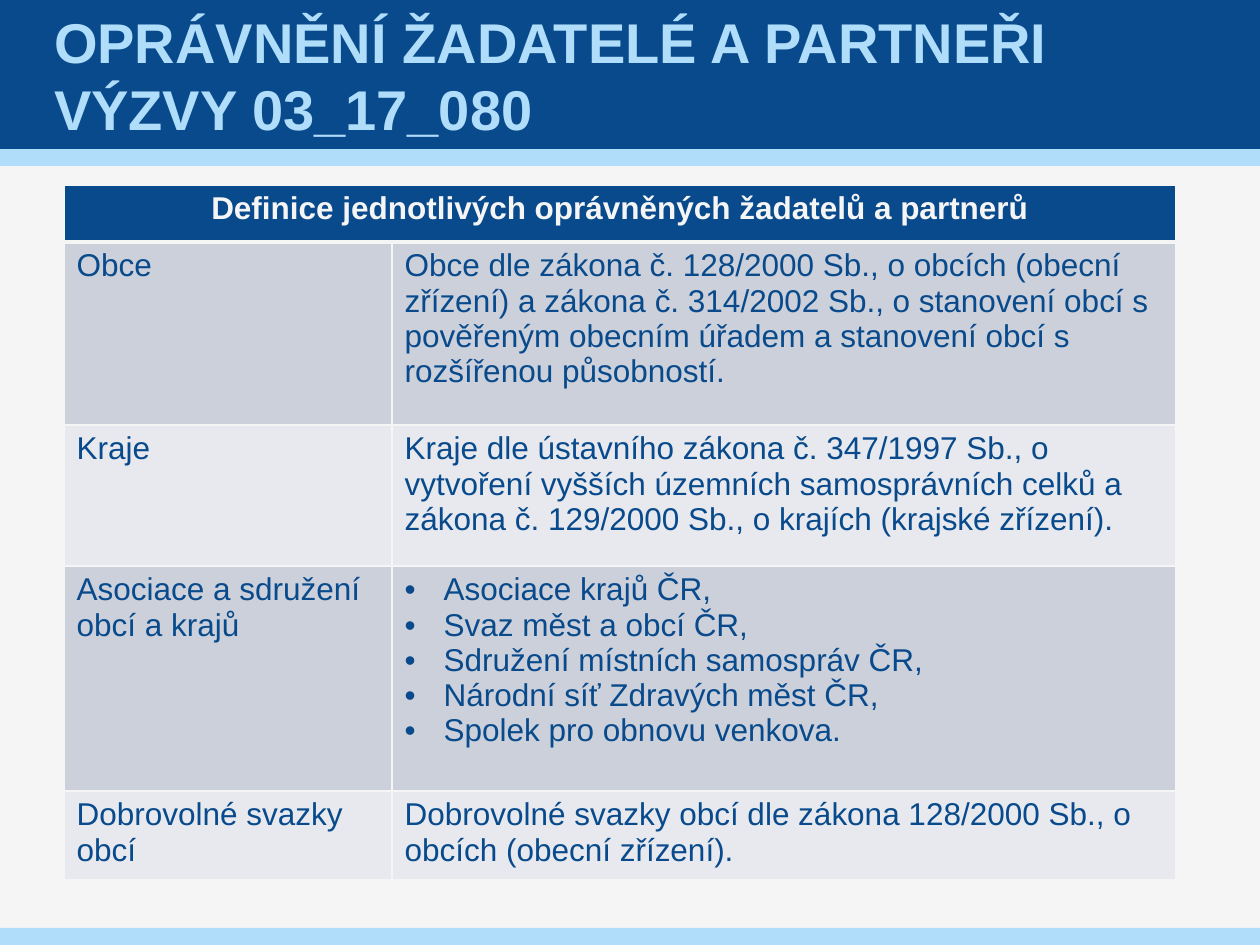
import pptx
import pptx.dml.color
import pptx.enum.shapes
import pptx.enum.text
import pptx.oxml
import pptx.oxml.ns
import pptx.util

RGBColor = pptx.dml.color.RGBColor
PP_ALIGN = pptx.enum.text.PP_ALIGN
MSO_ANCHOR = pptx.enum.text.MSO_ANCHOR

NAVY = RGBColor(0x08, 0x4A, 0x8B)
SKY = RGBColor(0xAF, 0xDD, 0xFA)
PAPER = RGBColor(0xF5, 0xF5, 0xF5)
BAND_DARK = RGBColor(0xCC, 0xD0, 0xDA)
BAND_LIGHT = RGBColor(0xE7, 0xE9, 0xEE)

FONT = "Arial"
PX_PER_INCH = 126
TITLE = "OPRÁVNĚNÍ ŽADATELÉ A PARTNEŘI VÝZVY 03_17_080"
HEADER = "Definice jednotlivých oprávněných žadatelů a partnerů"
COLUMN_WIDTHS = [328, 784]
ROW_HEIGHTS = [57, 183, 141, 225, 89]
APPLICANTS = [
    ("Obce", [
        "Obce dle zákona č. 128/2000 Sb., o obcích (obecní zřízení) a zákona "
        "č. 314/2002 Sb., o stanovení obcí s pověřeným obecním úřadem a "
        "stanovení obcí s rozšířenou působností."]),
    ("Kraje", [
        "Kraje dle ústavního zákona č. 347/1997 Sb., o vytvoření vyšších "
        "územních samosprávních celků a zákona č. 129/2000 Sb., o krajích "
        "(krajské zřízení)."]),
    ("Asociace a sdružení obcí a krajů", [
        "Asociace krajů ČR,",
        "Svaz měst a obcí ČR,",
        "Sdružení místních samospráv ČR,",
        "Národní síť Zdravých měst ČR,",
        "Spolek pro obnovu venkova."]),
    ("Dobrovolné svazky obcí", [
        "Dobrovolné svazky obcí dle zákona 128/2000 Sb., o obcích (obecní "
        "zřízení)."]),
]


def px(n):
    """Convert pixels to EMU."""
    return pptx.util.Emu(round(n * 914400 / PX_PER_INCH))


def format_runs(tf, size, color, bold=False):
    """Apply one font to every run of a text frame."""
    for p in tf.paragraphs:
        for r in p.runs:
            r.font.name = FONT
            r.font.size = pptx.util.Pt(size)
            r.font.bold = bold
            r.font.color.rgb = color


def add_bar(s, top, height, color):
    """Add a full-width bar behind the title."""
    sp = s.shapes.add_shape(pptx.enum.shapes.MSO_SHAPE.RECTANGLE,
                            0, px(top), px(1260), px(height))
    sp.shadow.inherit = False
    sp.fill.solid()
    sp.fill.fore_color.rgb = color
    sp.line.fill.background()
    s.shapes.title._element.addprevious(sp._element)


def set_title(s):
    """Place and format the title placeholder."""
    sp = s.shapes.title
    sp.left, sp.top, sp.width, sp.height = px(49), 0, px(1160), px(149)
    tf = sp.text_frame
    tf.text = TITLE
    tf.word_wrap = True
    tf.auto_size = pptx.enum.text.MSO_AUTO_SIZE.NONE
    tf.vertical_anchor = MSO_ANCHOR.MIDDLE
    tf.margin_left = tf.margin_right = px(5)
    tf.margin_top = tf.margin_bottom = 0
    tf.paragraphs[0].alignment = PP_ALIGN.LEFT
    format_runs(tf, 32, SKY, True)


def set_borders(cell, top=1, bottom=1):
    """Draw the four borders of a cell, widths in points."""
    tcPr = cell._tc.get_or_add_tcPr()
    for side, width in (("L", 1), ("R", 1), ("T", top), ("B", bottom)):
        tcPr.append(pptx.oxml.parse_xml(
            f'<a:ln{side} {pptx.oxml.ns.nsdecls("a")} '
            f'w="{pptx.util.Pt(width)}"><a:solidFill>'
            f'<a:srgbClr val="{PAPER}"/></a:solidFill></a:ln{side}>'))


def set_bullet(p):
    """Give a paragraph a bullet with a hanging indent."""
    pPr = p._p.get_or_add_pPr()
    pPr.set("marL", str(px(39)))
    pPr.set("indent", str(-px(39)))
    pPr.append(pptx.oxml.parse_xml(
        f'<a:buFont {pptx.oxml.ns.nsdecls("a")} typeface="{FONT}"/>'))
    pPr.append(pptx.oxml.parse_xml(
        f'<a:buChar {pptx.oxml.ns.nsdecls("a")} char="•"/>'))


def fill_cell(cell, lines, fill, color, bold=False):
    """Write lines into a cell, bulleted when there are several."""
    cell.fill.solid()
    cell.fill.fore_color.rgb = fill
    tf = cell.text_frame
    tf.text = "\n".join(lines)
    if len(lines) > 1:
        for p in tf.paragraphs:
            set_bullet(p)
    format_runs(tf, 18, color, bold)


def add_applicant_table(s):
    """Add the table of eligible applicants and partners."""
    table = s.shapes.add_table(
        len(ROW_HEIGHTS), len(COLUMN_WIDTHS), px(64), px(185),
        px(sum(COLUMN_WIDTHS)), px(sum(ROW_HEIGHTS))).table
    for column, width in zip(table.columns, COLUMN_WIDTHS):
        column.width = px(width)
    for i, (row, height) in enumerate(zip(table.rows, ROW_HEIGHTS)):
        row.height = px(height)
        for cell in row.cells:
            set_borders(cell, 3 if i == 1 else 1, 3 if i == 0 else 1)
    header = table.cell(0, 0)
    header.merge(table.cell(0, 1))
    fill_cell(header, [HEADER], NAVY, PAPER, True)
    header.text_frame.paragraphs[0].alignment = PP_ALIGN.CENTER
    for i, (name, definition) in enumerate(APPLICANTS, 1):
        band = BAND_DARK if i % 2 else BAND_LIGHT
        fill_cell(table.cell(i, 0), [name], band, NAVY)
        fill_cell(table.cell(i, 1), definition, band, NAVY)


def main():
    """Build and save the slide."""
    prs = pptx.Presentation()
    prs.slide_width, prs.slide_height = px(1260), px(945)
    s = prs.slides.add_slide(prs.slide_layouts[5])
    s.background.fill.solid()
    s.background.fill.fore_color.rgb = PAPER
    add_bar(s, 149, 17, SKY)
    add_bar(s, 0, 149, NAVY)
    add_bar(s, 928, 17, SKY)
    set_title(s)
    add_applicant_table(s)
    prs.save("out.pptx")


if __name__ == "__main__":
    main()
